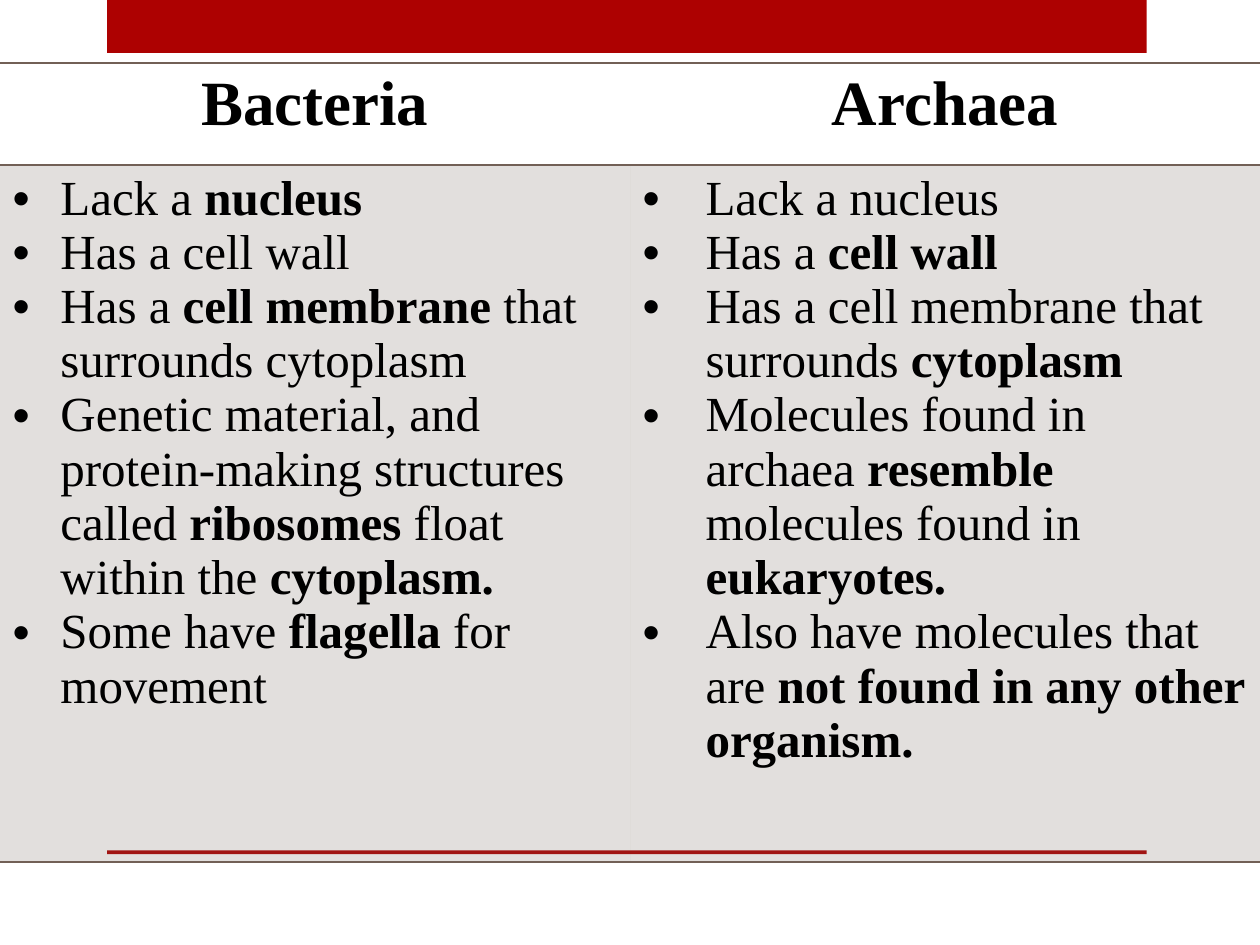
from lxml.etree import SubElement
from pptx import Presentation
from pptx.dml.color import RGBColor
from pptx.enum.shapes import MSO_SHAPE
from pptx.enum.text import PP_ALIGN
from pptx.oxml import parse_xml
from pptx.oxml.ns import nsdecls, qn
from pptx.util import Inches, Pt

RED = RGBColor(0xAD, 0x01, 0x01)
BROWN = RGBColor(0x72, 0x60, 0x56)
BLACK = RGBColor(0, 0, 0)

BACTERIA = [
    "Lack a **nucleus**",
    "Has a cell wall",
    "Has a **cell membrane** that surrounds cytoplasm",
    "Genetic material, and protein-making structures called **ribosomes**"
    " float within the **cytoplasm.**",
    "Some have **flagella** for movement",
]
ARCHAEA = [
    "Lack a nucleus",
    "Has a **cell wall**",
    "Has a cell membrane that surrounds **cytoplasm**",
    "Molecules found in archaea **resemble **molecules found in **eukaryotes.**",
    "Also have molecules that are **not found in any other organism.**",
]
DOMAINS = [("Bacteria", BACTERIA, 0.38), ("Archaea", ARCHAEA, 0.5)]


class ComparisonSlide:
    """Holds the slide and its style, and adds bars and a comparison table."""

    font = "Times New Roman"
    heading_size = Pt(36)
    body_size = Pt(28)

    def __init__(self, presentation):
        self.slide = presentation.slides.add_slide(presentation.slide_layouts[6])

    def add_bar(self, top, height):
        bar = self.slide.shapes.add_shape(
            MSO_SHAPE.RECTANGLE, Inches(0.85), Inches(top), Inches(8.25), Inches(height)
        )
        bar.shadow.inherit = False
        bar.fill.solid()
        bar.fill.fore_color.rgb = RED
        bar.line.fill.background()

    def add_comparison(self, domains):
        table = self.slide.shapes.add_table(
            2, len(domains), Inches(0), Inches(0.5), Inches(10), Inches(6.34)
        ).table
        table.first_row = table.horz_banding = False
        table.rows[0].height = Inches(0.81)
        table.rows[1].height = Inches(5.53)
        for column, (heading, facts, indent) in enumerate(domains):
            self.fill_heading(table.cell(0, column), heading)
            self.fill_facts(table.cell(1, column), facts, indent)

    def fill_heading(self, cell, heading):
        cell.fill.background()
        self.add_borders(cell)
        paragraph = cell.text_frame.paragraphs[0]
        paragraph.alignment = PP_ALIGN.CENTER
        self.add_run(paragraph, heading, self.heading_size, True)

    def fill_facts(self, cell, facts, indent):
        cell.fill.solid()
        cell.fill.fore_color.rgb = BROWN
        tint = cell._tc.get_or_add_tcPr().find(".//" + qn("a:srgbClr"))
        SubElement(tint, qn("a:alpha"), val="20000")
        self.add_borders(cell)
        frame = cell.text_frame
        for number, fact in enumerate(facts):
            paragraph = frame.add_paragraph() if number else frame.paragraphs[0]
            self.add_bullet(paragraph, indent)
            for part, words in enumerate(fact.split("**")):
                if words:
                    self.add_run(paragraph, words, self.body_size, part % 2 == 1)

    def add_run(self, paragraph, words, size, bold):
        run = paragraph.add_run()
        run.text = words
        run.font.name = self.font
        run.font.size = size
        run.font.bold = bold
        run.font.color.rgb = BLACK

    def add_bullet(self, paragraph, indent):
        properties = paragraph._p.get_or_add_pPr()
        properties.set("marL", str(Inches(indent)))
        properties.set("indent", str(-Inches(indent)))
        SubElement(properties, qn("a:buFont"), typeface="Arial")
        SubElement(properties, qn("a:buChar"), char="•")

    def add_borders(self, cell):
        ruled = f'<a:solidFill><a:srgbClr val="{BROWN}"/></a:solidFill>'
        properties = cell._tc.get_or_add_tcPr()
        for position, side in enumerate("LRTB"):
            paint = ruled if side in "TB" else "<a:noFill/>"
            border = f'<a:ln{side} {nsdecls("a")} w="{Pt(1)}">{paint}</a:ln{side}>'
            properties.insert(position, parse_xml(border))


def main():
    presentation = Presentation()
    presentation.slide_width = Inches(10)
    presentation.slide_height = Inches(7.5)
    comparison = ComparisonSlide(presentation)
    comparison.add_bar(0, 0.42)
    comparison.add_bar(6.75, 0.03)
    comparison.add_comparison(DOMAINS)
    presentation.save("out.pptx")


if __name__ == "__main__":
    main()
